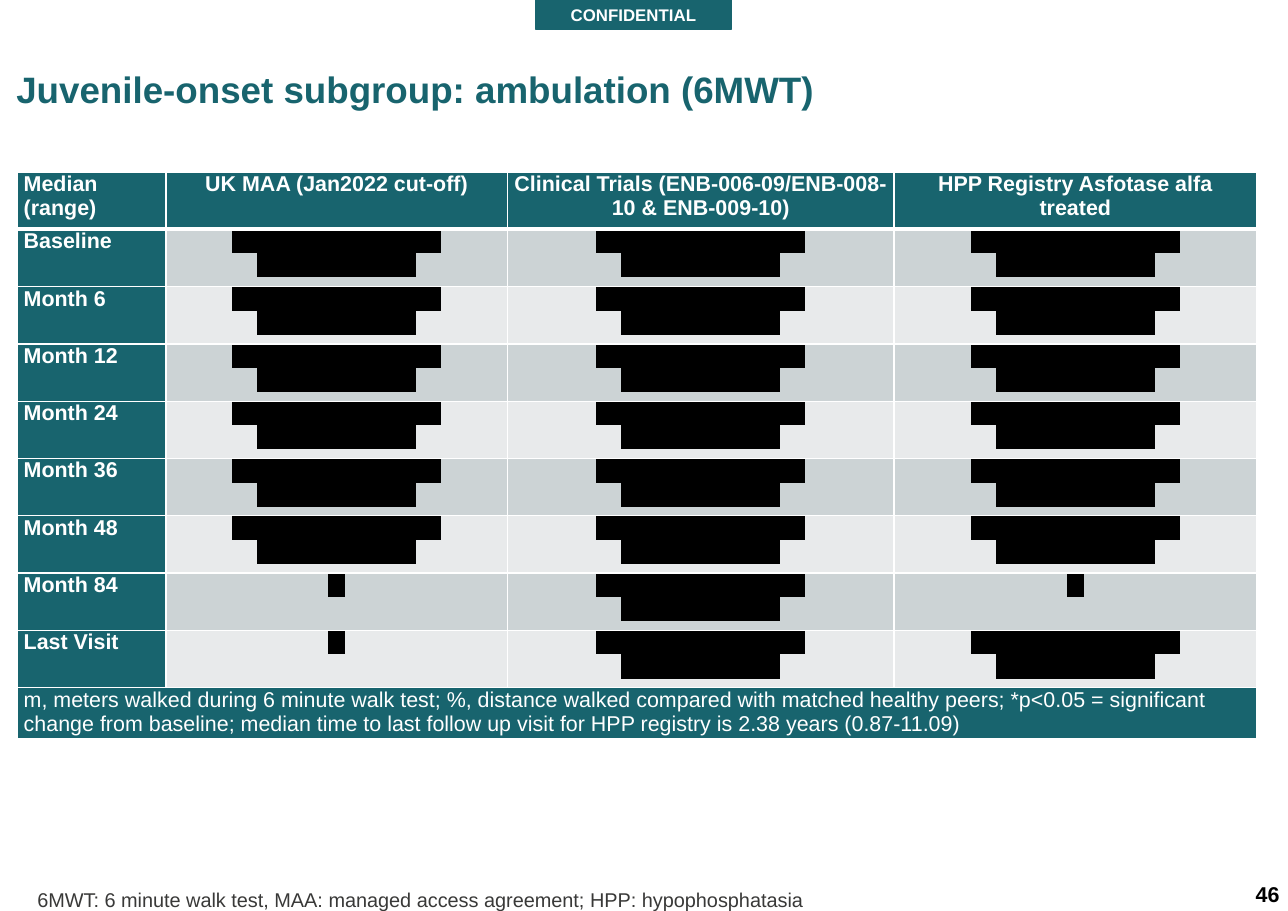
from lxml.etree import SubElement
from pptx import Presentation
from pptx.dml.color import RGBColor as RGB
from pptx.enum.shapes import MSO_SHAPE as SHAPE
from pptx.enum.text import MSO_ANCHOR as ANCHOR, PP_ALIGN as ALIGN
from pptx.oxml import parse_xml
from pptx.oxml.ns import nsdecls, qn
from pptx.util import Pt

COLORS = {"teal": "18646E", "white": "FFFFFF", "black": "000000",
          "gray": "393938", "dark": "CCD3D5", "light": "E8EAEB"}
LONG = "*" * 25 + " " + "*" * 19
SHORT = "**"
HEADERS = ["Median (range)", "UK MAA (Jan2022 cut-off)",
           "Clinical Trials (ENB-006-09/ENB-008-10 & ENB-009-10)",
           "HPP Registry Asfotase alfa treated"]
VISITS = [(name, LONG, LONG, LONG) for name in
          ("Baseline", "Month 6", "Month 12", "Month 24", "Month 36", "Month 48")]
VISITS += [("Month 84", SHORT, LONG, SHORT), ("Last Visit", SHORT, LONG, LONG)]
FOOTNOTE = ("m, meters walked during 6 minute walk test; %, distance walked compared "
            "with matched healthy peers; *p<0.05 = significant change from baseline; "
            "median time to last follow up visit for HPP registry is 2.38 years (0.87-11.09)")


class Deck:
    font = "Arial"

    def __init__(self, width, height):
        self.prs = Presentation()
        self.prs.slide_width, self.prs.slide_height = Pt(width), Pt(height)
        self.slide = self.prs.slides.add_slide(self.prs.slide_layouts[6])

    def fill_text(self, tf, text, size, color, bold=False, align=ALIGN.LEFT,
                  inset=(7.2, 3.6), anchor=ANCHOR.TOP, spacing=None, after=0):
        x, y = inset
        frame = {"word_wrap": True, "vertical_anchor": anchor,
                 "margin_left": Pt(x), "margin_right": Pt(x),
                 "margin_top": Pt(y), "margin_bottom": Pt(y)}
        for name, value in frame.items():
            setattr(tf, name, value)
        p = tf.paragraphs[0]
        p.alignment, p.space_after = align, Pt(after)
        if spacing:
            p.line_spacing = Pt(spacing)
        r = p.add_run()
        r.text = text
        for name, value in {"name": self.font, "size": Pt(size), "bold": bold}.items():
            setattr(r.font, name, value)
        r.font.color.rgb = RGB.from_string(COLORS[color])
        return r

    def text(self, box, text, size, color, **style):
        sp = self.slide.shapes.add_textbox(*map(Pt, box))
        self.fill_text(sp.text_frame, text, size, color, **style)

    def rect(self, box, fill, text, size, color, line=None, **style):
        sp = self.slide.shapes.add_shape(SHAPE.RECTANGLE, *map(Pt, box))
        sp.shadow.inherit = False
        sp.fill.solid()
        sp.fill.fore_color.rgb = RGB.from_string(COLORS[fill])
        if line:
            sp.line.color.rgb = RGB.from_string(COLORS[line])
            sp.line.width = Pt(0.75)
        else:
            sp.line.fill.background()
        self.fill_text(sp.text_frame, text, size, color, **style)

    def table(self, left, top, widths, heights):
        sp = self.slide.shapes.add_table(len(heights), len(widths), Pt(left), Pt(top),
                                         Pt(sum(widths)), Pt(sum(heights)))
        for column, width in zip(sp.table.columns, widths):
            column.width = Pt(width)
        for row, height in zip(sp.table.rows, heights):
            row.height = Pt(height)
        return sp.table

    def borders(self, cell, top=1, bottom=1):
        tcPr = cell._tc.get_or_add_tcPr()
        sides = {"L": 1, "R": 1, "T": top, "B": bottom}
        for i, (side, width) in enumerate(sides.items()):
            tcPr.insert(i, parse_xml(
                f'<a:ln{side} {nsdecls("a")} w="{Pt(width)}"><a:solidFill>'
                f'<a:srgbClr val="{COLORS["white"]}"/></a:solidFill></a:ln{side}>'))

    def cell(self, cell, text, fill, color="white", inset=4.3, **style):
        cell.fill.solid()
        cell.fill.fore_color.rgb = RGB.from_string(COLORS[fill])
        r = self.fill_text(cell.text_frame, text, 14, color, inset=(0, 0), after=2, **style)
        cell.margin_left = cell.margin_right = Pt(inset)
        cell.margin_top = cell.margin_bottom = Pt(0)
        cell.vertical_anchor = ANCHOR.TOP
        return r

    def redacted(self, cell, text, fill):
        r = self.cell(cell, text, fill, "black", inset=5, align=ALIGN.CENTER)
        r.font.underline = True
        rPr = r._r.get_or_add_rPr()
        mark = SubElement(rPr, qn("a:highlight"))
        SubElement(mark, qn("a:srgbClr"), val=COLORS["black"])
        rPr.find(qn("a:solidFill")).addnext(mark)

    def results(self):
        tbl = self.table(11.2, 112.4, [97.2, 223.2, 252.7, 236.9], [37.45] * 9 + [31])
        for c, title in enumerate(HEADERS):
            self.cell(tbl.cell(0, c), title, "teal", bold=True,
                      align=ALIGN.CENTER if c else ALIGN.LEFT)
        for i, (visit, *values) in enumerate(VISITS, 1):
            self.cell(tbl.cell(i, 0), visit, "teal", bold=True)
            for c, value in enumerate(values, 1):
                self.redacted(tbl.cell(i, c), value, "dark" if i % 2 else "light")
        last = len(VISITS) + 1
        tbl.cell(last, 0).merge(tbl.cell(last, len(HEADERS) - 1))
        self.cell(tbl.cell(last, 0), FOOTNOTE, "teal")
        for i, row in enumerate(tbl.rows):
            for cell in row.cells:
                self.borders(cell, top=3 if i == 1 else 1, bottom=1 if i else 3)


def main():
    deck = Deck(841.7, 595.4)
    deck.rect((17.3, 576.7, 807, 23), "white",
              "6MWT: 6 minute walk test, MAA: managed access agreement; HPP: hypophosphatasia",
              13, "gray", after=3)
    deck.text((3.6, 26.6, 817, 93.6), "Juvenile-onset subgroup: ambulation (6MWT)",
              24, "teal", bold=True, spacing=42)
    deck.rect((350, 0, 128, 19), "teal", "CONFIDENTIAL", 11, "white", line="teal",
              bold=True, align=ALIGN.CENTER, inset=(2.9, 2.9))
    deck.results()
    deck.text((808.6, 566.6, 39.6, 25.9), "46", 14, "black", bold=True,
              align=ALIGN.CENTER, inset=(0, 0), anchor=ANCHOR.BOTTOM)
    deck.prs.save("out.pptx")


if __name__ == "__main__":
    main()
